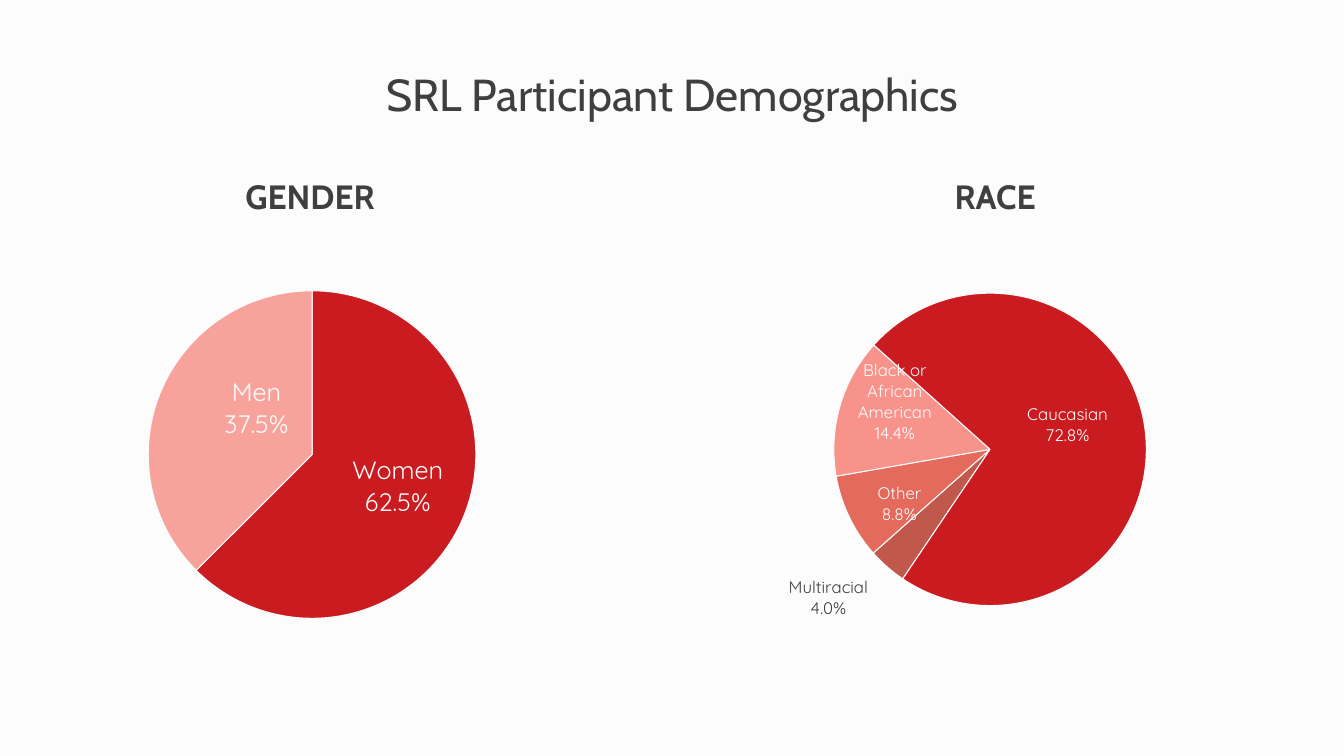
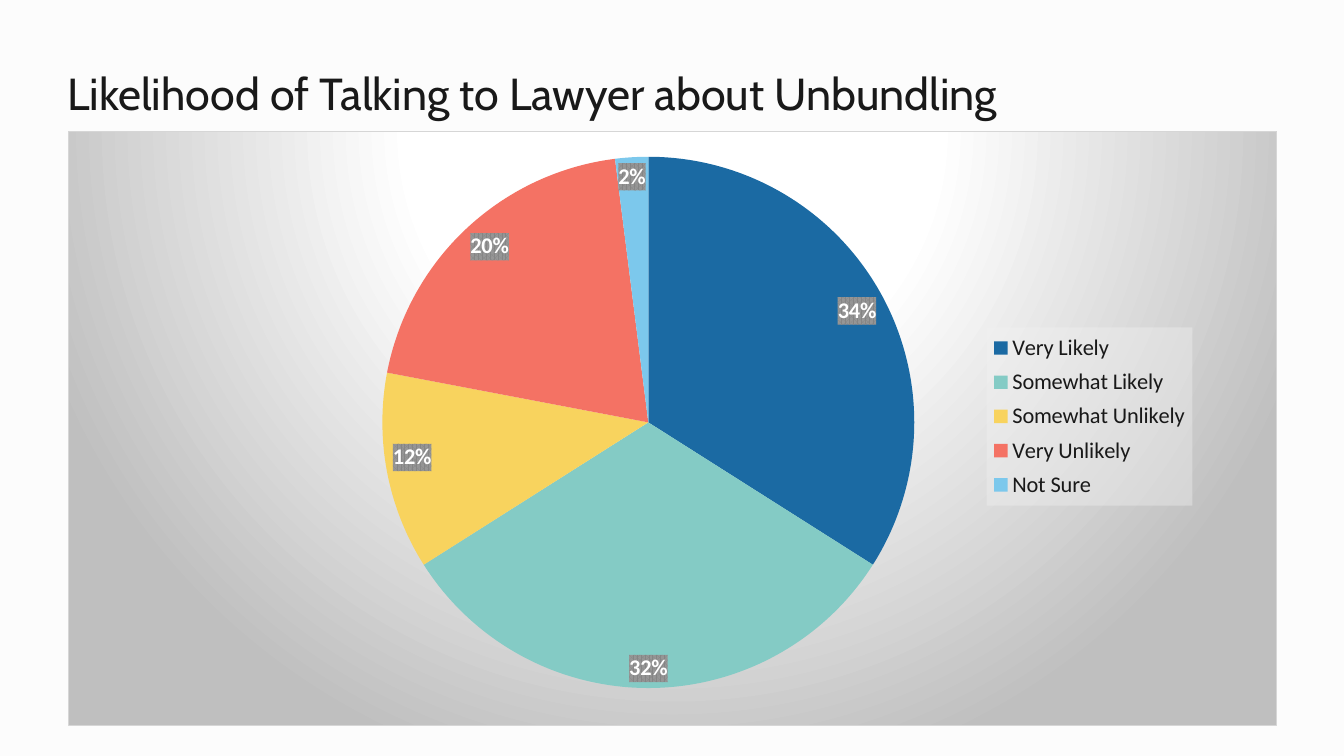
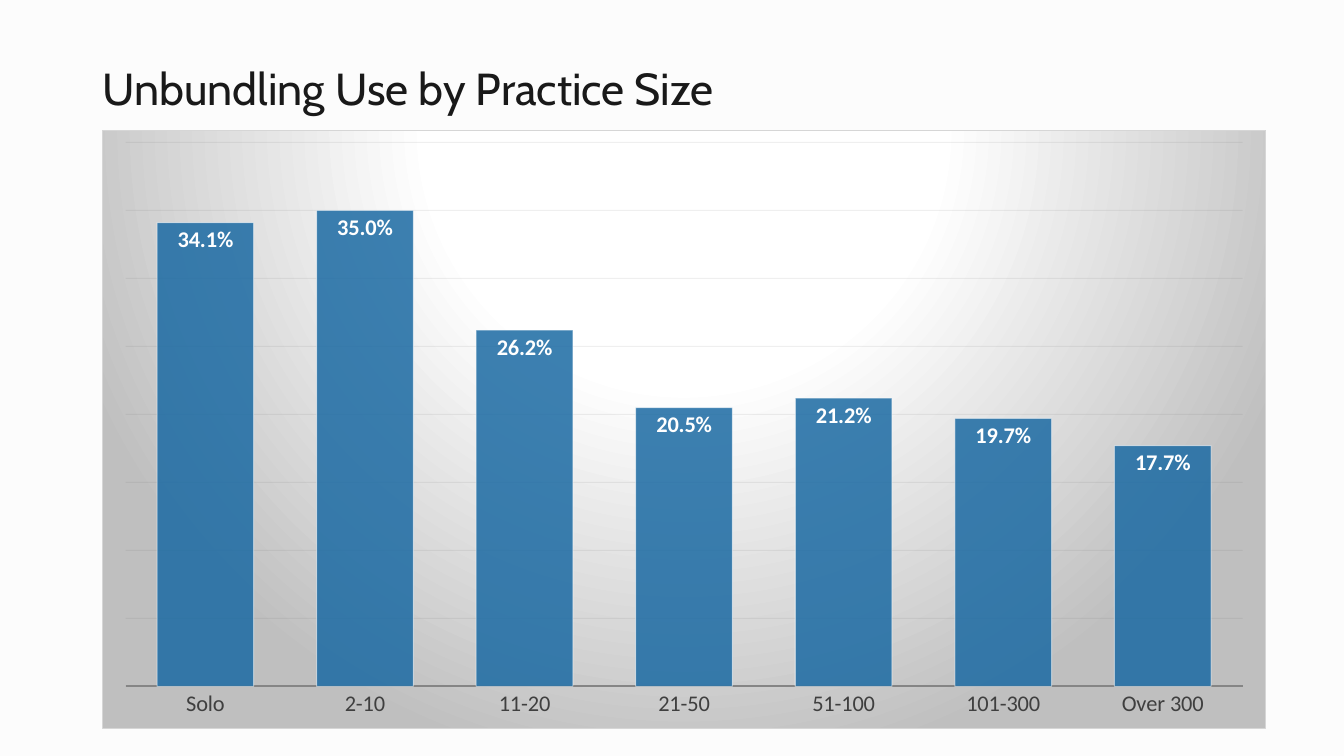
"""Builds three slides of survey charts about unbundled legal services."""
from dataclasses import dataclass

from pptx import Presentation
from pptx.chart.data import CategoryChartData
from pptx.dml.color import RGBColor
from pptx.enum.chart import XL_CHART_TYPE as ChartType
from pptx.enum.chart import XL_LABEL_POSITION as LabelPosition
from pptx.enum.chart import XL_LEGEND_POSITION as LegendPosition
from pptx.enum.chart import XL_TICK_MARK as TickMark
from pptx.enum.text import MSO_ANCHOR as Anchor
from pptx.enum.text import PP_ALIGN as Align
from pptx.oxml import parse_xml
from pptx.oxml.ns import nsdecls, qn
from pptx.util import Inches, Pt

NAMESPACES = nsdecls("c", "a")
PREFIXES = {prefix: qn(f"{prefix}:x")[1:-2] for prefix in ("c", "a")}


@dataclass(frozen=True)
class Theme:
    background: str = "FCFCFC"
    white: str = "FFFFFF"
    ink: str = "191919"
    dark: str = "3F3F3F"
    muted: str = "5C5C5C"
    grid: str = "646464"
    axis: str = "858585"
    border: str = "D6D6D6"
    panel_edge: str = "BFBFBF"
    label_stripe: str = "969696"
    legend_fill: str = "F2F2F2"
    blue: str = "1B6AA3"
    teal: str = "84CBC5"
    yellow: str = "F8D35E"
    coral: str = "F47264"
    sky: str = "7CC8EC"
    red: str = "CA1C20"
    rose: str = "F7A39B"
    salmon: str = "F7938B"
    brick: str = "E36A5C"
    brown: str = "C0584C"
    title_font: str = "Cabin"
    survey_font: str = "Quicksand"
    chart_font: str = "Calibri"
    title_size: int = 32
    heading_size: int = 24
    large_size: int = 18
    label_size: int = 16
    small_size: int = 12
    chart_size: int = 10


@dataclass(frozen=True)
class Slice:
    name: str
    share: float
    colour: str
    shift: tuple
    outside: bool = False
    lines: tuple = ()


THEME = Theme()


def style_font(font, name, size, colour, bold=False):
    font.name = name
    font.size = Pt(size)
    font.bold = bold
    font.color.rgb = RGBColor.from_string(colour)


def style_line(line, colour, width=0.75):
    line.color.rgb = RGBColor.from_string(colour)
    line.width = Pt(width)


def style_fill(fill, colour):
    fill.solid()
    fill.fore_color.rgb = RGBColor.from_string(colour)


def find(chart, steps):
    return chart.element.find(f".//{steps}", PREFIXES)


def fade(chart, steps, opacity):
    colour = find(chart, f"{steps}/a:srgbClr")
    colour.append(parse_xml(f'<a:alpha {NAMESPACES} val="{opacity * 1000}"/>'))


def layout_xml(box, target=""):
    sides = "".join(f'<c:{side} val="{value}"/>' for side, value in zip("xywh", box))
    return parse_xml(
        f'<c:layout {NAMESPACES}><c:manualLayout>{target}'
        f'<c:xMode val="edge"/><c:yMode val="edge"/>{sides}</c:manualLayout></c:layout>')


class Deck:
    def __init__(self, theme):
        self.theme = theme
        self.presentation = Presentation()
        self.presentation.slide_width = Inches(13.33)
        self.presentation.slide_height = Inches(7.5)
        self.slide = None

    def add_slide(self):
        self.slide = self.presentation.slides.add_slide(self.presentation.slide_layouts[6])
        style_fill(self.slide.background.fill, self.theme.background)

    def text(self, words, box, size, colour, align, bold=False):
        frame = self.slide.shapes.add_textbox(*map(Inches, box)).text_frame
        frame.word_wrap = True
        frame.vertical_anchor = Anchor.MIDDLE
        paragraph = frame.paragraphs[0]
        paragraph.text = words
        paragraph.alignment = align
        style_font(paragraph.font, self.theme.title_font, size, colour, bold)

    def title(self, words, box, colour=THEME.ink, align=Align.LEFT):
        self.text(words, box, self.theme.title_size, colour, align)

    def heading(self, words, box):
        self.text(words, box, self.theme.heading_size, self.theme.dark, Align.CENTER, True)

    def chart(self, kind, box, values, plot_box, font, size, number_format="General"):
        data = CategoryChartData(number_format=number_format)
        data.categories = list(values)
        data.add_series("Series 1", list(values.values()))
        chart = self.slide.shapes.add_chart(kind, *map(Inches, box), data).chart
        chart.has_title = False
        chart.has_legend = False
        style_font(chart.font, font, size, self.theme.muted)
        plot_area = find(chart, "c:plotArea")
        for layout in plot_area.findall(qn("c:layout")):
            plot_area.remove(layout)
        plot_area.insert(0, layout_xml(plot_box, '<c:layoutTarget val="inner"/>'))
        return chart

    def pie(self, box, values, colours, plot_box, font, size, number_format="General", start=0):
        chart = self.chart(ChartType.PIE, box, values, plot_box, font, size, number_format)
        chart.plots[0].vary_by_categories = True
        for index, colour in enumerate(colours):
            style_fill(chart.plots[0].series[0].points[index].format.fill, colour)
        pie = find(chart, "c:pieChart")
        for angle in pie.findall(qn("c:firstSliceAng")):
            pie.remove(angle)
        pie.append(parse_xml(f'<c:firstSliceAng {NAMESPACES} val="{start}"/>'))
        return chart

    def named_pie(self, box, slices, plot_box, size, start=0):
        theme = self.theme
        chart = self.pie(box, {part.name: part.share for part in slices},
                         [part.colour for part in slices], plot_box,
                         theme.survey_font, theme.large_size, "###0.0%", start)
        series = chart.plots[0].series[0]
        labels = series.data_labels
        labels.show_value = True
        labels.show_category_name = True
        style_font(labels.font, theme.survey_font, size, theme.background)
        label_list = find(chart, "c:dLbls")
        for leader in label_list.findall(qn("c:showLeaderLines")):
            leader.set("val", "0")
        for index, part in enumerate(slices):
            style_line(series.points[index].format.line, theme.background)
            label_list.insert(index, self.slice_label(index, part, size))

    def slice_label(self, index, part, size):
        colour = self.theme.dark if part.outside else self.theme.background
        position = "outEnd" if part.outside else "ctr"
        style = f'sz="{size * 100}" b="0"'
        face = (f'<a:solidFill><a:srgbClr val="{colour}"/></a:solidFill>'
                f'<a:latin typeface="{self.theme.survey_font}"/>')
        properties = f'<a:pPr><a:defRPr {style}>{face}</a:defRPr></a:pPr>'
        rich = ""
        if part.lines:
            paragraphs = "".join(
                f'<a:p>{properties}<a:r><a:rPr lang="en-US" {style}>{face}</a:rPr>'
                f'<a:t>{line}</a:t></a:r></a:p>'
                for line in (*part.lines, f"{part.share:.1%}"))
            rich = f'<c:tx><c:rich><a:bodyPr/>{paragraphs}</c:rich></c:tx>'
        shows = {"LegendKey": 0, "Val": 1, "CatName": 1, "SerName": 0, "Percent": 0,
                 "BubbleSize": 0}
        flags = "".join(f'<c:show{name} val="{on}"/>' for name, on in shows.items())
        return parse_xml(
            f'<c:dLbl {NAMESPACES}><c:idx val="{index}"/><c:layout><c:manualLayout>'
            f'<c:x val="{part.shift[0]}"/><c:y val="{part.shift[1]}"/></c:manualLayout>'
            f'</c:layout>{rich}<c:numFmt formatCode="###0.0%" sourceLinked="0"/>'
            f'<c:spPr><a:noFill/></c:spPr><c:txPr><a:bodyPr/><a:p>{properties}'
            f'<a:endParaRPr lang="en-US"/></a:p></c:txPr><c:dLblPos val="{position}"/>'
            f'{flags}<c:separator>\n</c:separator></c:dLbl>')

    def panel(self, chart):
        theme = self.theme
        stops = "".join(
            f'<a:gs pos="{place * 1000}"><a:srgbClr val="{colour}"/></a:gs>'
            for place, colour in ((0, theme.white), (39, theme.white), (100, theme.panel_edge)))
        find(chart, "c:plotArea").getparent().addnext(parse_xml(
            f'<c:spPr {NAMESPACES}><a:gradFill><a:gsLst>{stops}</a:gsLst><a:path path="circle">'
            '<a:fillToRect l="50000" t="-80000" r="50000" b="180000"/></a:path></a:gradFill>'
            f'<a:ln w="{Pt(0.75)}"><a:solidFill><a:srgbClr val="{theme.border}"/></a:solidFill>'
            '</a:ln></c:spPr>'))

    def end_labels(self, chart, number_format, percent=False):
        labels = chart.plots[0].series[0].data_labels
        labels.show_percentage = percent
        labels.show_value = not percent
        labels.number_format = number_format
        labels.number_format_is_linked = False
        labels.position = LabelPosition.INSIDE_END
        style_font(labels.font, self.theme.chart_font, self.theme.label_size,
                   self.theme.white, True)

    def label_pattern(self, chart):
        find(chart, "c:dLbls/c:txPr").addprevious(parse_xml(
            f'<c:spPr {NAMESPACES}><a:pattFill prst="pct75">'
            f'<a:fgClr><a:srgbClr val="{self.theme.axis}"/></a:fgClr>'
            f'<a:bgClr><a:srgbClr val="{self.theme.label_stripe}"/></a:bgClr>'
            '</a:pattFill></c:spPr>'))

    def legend(self, chart, box):
        theme = self.theme
        chart.has_legend = True
        chart.legend.position = LegendPosition.RIGHT
        chart.legend.include_in_layout = False
        style_font(chart.legend.font, theme.chart_font, theme.label_size, theme.ink)
        legend = find(chart, "c:legend")
        for layout in legend.findall(qn("c:layout")):
            legend.remove(layout)
        find(chart, "c:legendPos").addnext(layout_xml(box))
        find(chart, "c:legend/c:overlay").addnext(parse_xml(
            f'<c:spPr {NAMESPACES}><a:solidFill><a:srgbClr val="{theme.legend_fill}"/>'
            '</a:solidFill></c:spPr>'))
        fade(chart, "c:legend/c:spPr/a:solidFill", 39)

    def columns(self, box, values, plot_box):
        theme = self.theme
        chart = self.chart(ChartType.COLUMN_CLUSTERED, box, values, plot_box,
                           theme.chart_font, theme.chart_size, "0.0%")
        plot = chart.plots[0]
        plot.vary_by_categories = False
        plot.gap_width = 65
        bars = plot.series[0].format
        style_fill(bars.fill, theme.blue)
        style_line(bars.line, theme.white)
        fade(chart, "c:ser/c:spPr/a:solidFill", 85)
        fade(chart, "c:ser/c:spPr/a:ln/a:solidFill", 50)
        category_axis = chart.category_axis
        category_axis.major_tick_mark = TickMark.NONE
        style_font(category_axis.tick_labels.font, theme.chart_font, theme.label_size, theme.dark)
        style_line(category_axis.format.line, theme.axis, 1.5)
        value_axis = chart.value_axis
        value_axis.visible = False
        value_axis.minimum_scale, value_axis.maximum_scale = 0, 0.4
        value_axis.major_unit = 0.05
        style_line(value_axis.major_gridlines.format.line, theme.grid)
        fade(chart, "c:majorGridlines/c:spPr/a:ln/a:solidFill", 10)
        return chart


def demographics(deck):
    theme = deck.theme
    deck.add_slide()
    deck.named_pie((7.37, 1.96, 5, 5.1), (
        Slice("Multiracial", 0.04, theme.brown, (-0.03, 0.01), outside=True),
        Slice("Other", 0.088, theme.brick, (-0.04, 0.04)),
        Slice("Black or African American", 0.144, theme.salmon, (-0.04, -0.05),
              lines=("Black or", "African", "American")),
        Slice("Caucasian", 0.728, theme.red, (0, -0.03)),
    ), (0.18, 0.18, 0.62, 0.62), theme.small_size, 214)
    deck.named_pie((0.72, 1.96, 5, 5.1), (
        Slice("Women", 0.625, theme.red, (0.02, 0)),
        Slice("Men", 0.375, theme.rose, (0.04, -0.03)),
    ), (0.15, 0.18, 0.65, 0.64), theme.large_size)
    deck.heading("RACE", (8.31, 1.7, 3.12, 0.5))
    deck.heading("GENDER", (1.34, 1.7, 3.47, 0.5))
    deck.title("SRL Participant Demographics", (0.67, 0.3, 12, 1.25), theme.dark, Align.CENTER)


def likelihood(deck):
    theme = deck.theme
    deck.add_slide()
    deck.title("Likelihood of Talking to Lawyer about Unbundling", (0.57, 0.29, 12, 1.25))
    answers = {"Very Likely": 34, "Somewhat Likely": 32, "Somewhat Unlikely": 12,
               "Very Unlikely": 20, "Not Sure": 2}
    colours = (theme.blue, theme.teal, theme.yellow, theme.coral, theme.sky)
    chart = deck.pie((0.67, 1.3, 12, 5.9), answers, colours, (0.26, 0.02, 0.44, 0.94),
                     theme.chart_font, theme.chart_size)
    deck.panel(chart)
    deck.end_labels(chart, "0%", percent=True)
    deck.label_pattern(chart)
    deck.legend(chart, (0.76, 0.33, 0.17, 0.3))


def practice_size(deck):
    deck.add_slide()
    deck.title("Unbundling Use by Practice Size", (0.92, 0.14, 11.5, 1.45))
    use = {"Solo": 0.341, "2-10": 0.35, "11-20": 0.262, "21-50": 0.205,
           "51-100": 0.212, "101-300": 0.197, "Over 300": 0.177}
    chart = deck.columns((1.01, 1.29, 11.55, 5.94), use, (0.02, 0.02, 0.96, 0.91))
    deck.panel(chart)
    deck.end_labels(chart, "0.0%")


def main():
    deck = Deck(THEME)
    for build in (demographics, likelihood, practice_size):
        build(deck)
    deck.presentation.save("out.pptx")


if __name__ == "__main__":
    main()
